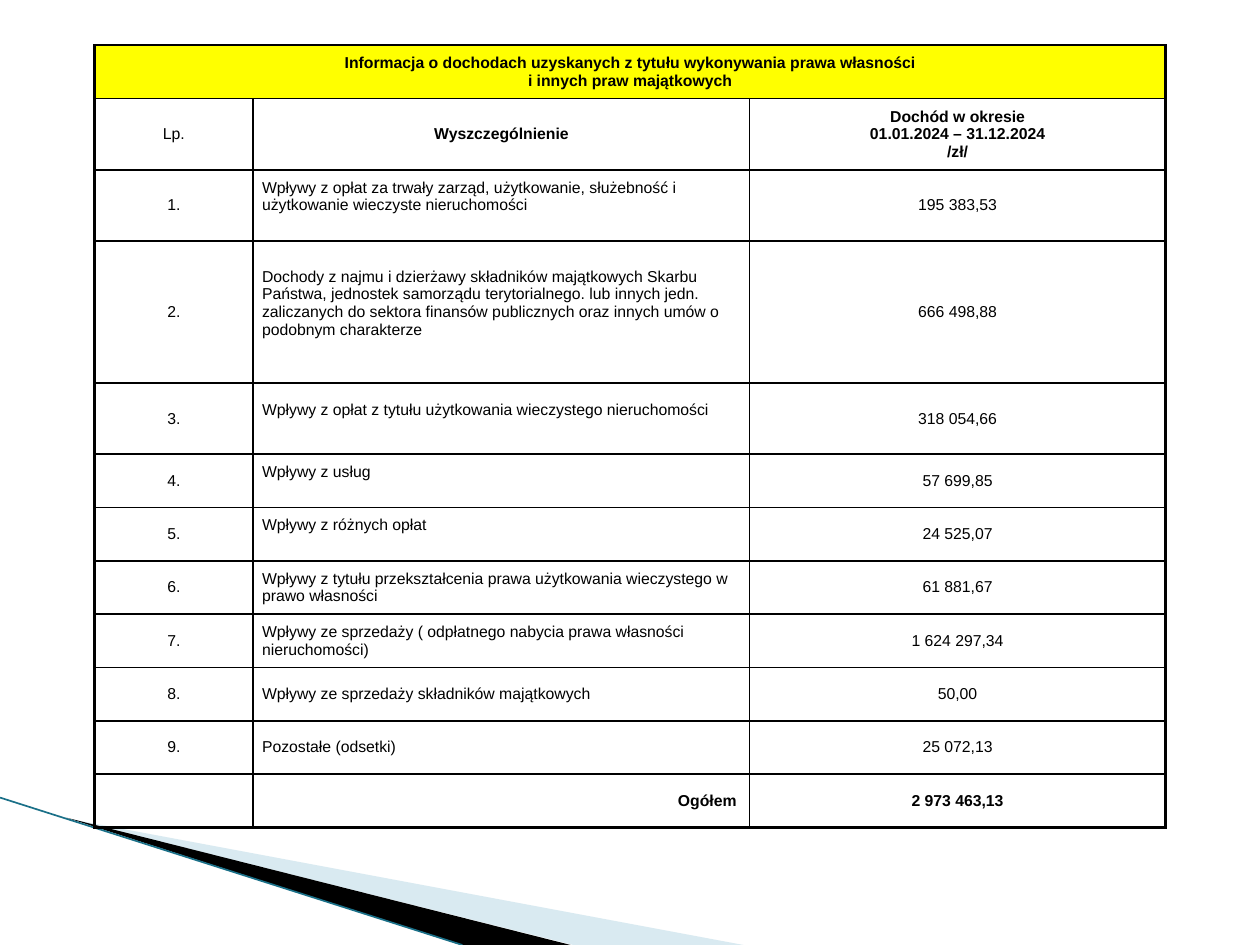
from lxml import etree
from pptx import Presentation
from pptx.dml import color
from pptx.enum import shapes, text
from pptx.oxml import ns
from pptx.util import Inches, Pt

MID, END, LEFT = text.PP_ALIGN.CENTER, text.PP_ALIGN.RIGHT, text.PP_ALIGN.LEFT
COLS = [1.26, 3.94, 3.3]
LINES = [3, 4, 4, 8, 4, 3, 3, 3, 3, 3, 3, 3]
GAPS = range(2, 7)
TITLE = ("Informacja o dochodach uzyskanych z tytułu wykonywania prawa własności"
         "\vi innych praw majątkowych")
HEAD = ("Lp.", "Wyszczególnienie", "Dochód w okresie\v01.01.2024 – 31.12.2024\n/zł/")
ITEMS = [
    ("Wpływy z opłat za trwały zarząd, użytkowanie, służebność i "
     "użytkowanie wieczyste nieruchomości", "195 383,53"),
    ("Dochody z najmu i dzierżawy składników majątkowych Skarbu Państwa, "
     "jednostek samorządu terytorialnego. lub innych jedn. zaliczanych do sektora "
     "finansów publicznych oraz innych umów o podobnym charakterze", "666 498,88"),
    ("Wpływy z opłat z tytułu użytkowania wieczystego nieruchomości", "318 054,66"),
    ("Wpływy z usług", "57 699,85"),
    ("Wpływy z różnych opłat", "24 525,07"),
    ("Wpływy z tytułu przekształcenia prawa użytkowania wieczystego w "
     "prawo własności", "61 881,67"),
    ("Wpływy ze sprzedaży ( odpłatnego nabycia prawa własności nieruchomości)",
     "1 624 297,34"),
    ("Wpływy ze sprzedaży składników majątkowych", "50,00"),
    ("Pozostałe (odsetki)", "25 072,13"),
]
TOTAL = ("", "Ogółem ", "2 973 463,13")


def rgb(code):
    """Turn a hex string into a colour."""
    return color.RGBColor.from_string(code)


def wedge(slide, left, top, pts, code, alpha=100):
    """Draw a filled outline with points relative to its corner."""
    spots = [(Inches(left + x), Inches(top + y)) for x, y in pts]
    pen = slide.shapes.build_freeform(*spots[0])
    pen.add_line_segments(spots[1:], close=True)
    shape = pen.convert_to_shape()
    shape.shadow.inherit = False
    shape.fill.solid()
    shape.fill.fore_color.rgb = rgb(code)
    shape.line.fill.background()
    if alpha < 100:
        tint = shape.fill._xPr.find(".//" + ns.qn("a:srgbClr"))
        etree.SubElement(tint, ns.qn("a:alpha"), val=str(alpha * 1000))


def corner(slide, left, top):
    """Draw the slanted decoration at the lower left."""
    wedge(slide, left + 0.55, top + 0.17,
          [(0, 0), (5.35, 1), (4, 1)], "A0CBDC", 40)
    wedge(slide, left + 0.53, top + 0.16,
          [(0, 0), (4, 1.01), (3.13, 1.01)], "000000")
    line = slide.shapes.add_connector(
        shapes.MSO_CONNECTOR.STRAIGHT, Inches(left), Inches(top),
        Inches(left + 3.67), Inches(top + 1.17))
    line.line.color.rgb = rgb("1A7088")
    line.line.width = Pt(0.95)
    etree.SubElement(line._element.spPr, ns.qn("a:effectLst"))


def frame(cell, row, col):
    """Rule a cell, heavier on the outside and below the header."""
    last = len(LINES) - 1
    heavy = {"L": col == 0, "R": col == 2 or row == 0,
             "T": row in (0, 2), "B": row in (1, last)}
    props = cell._tc.get_or_add_tcPr()
    for spot, (side, bold) in enumerate(heavy.items()):
        edge = etree.Element(ns.qn("a:ln" + side), w=str(Pt(1.5 if bold else 1)))
        fill = etree.SubElement(edge, ns.qn("a:solidFill"))
        etree.SubElement(fill, ns.qn("a:srgbClr"), val="000000")
        props.insert(spot, edge)


def fill_cell(cell, words, align, bold, gap):
    """Set the words and look of one cell."""
    cell.text = words
    cell.vertical_anchor = text.MSO_ANCHOR.MIDDLE
    cell.margin_left = cell.margin_right = Inches(0.07)
    cell.margin_top = 0
    cell.margin_bottom = Inches(gap)
    for para in cell.text_frame.paragraphs:
        para.alignment = align
        para.font.name = "Arial"
        para.font.size = Pt(9)
        para.font.bold = bold
        para.font.color.rgb = rgb("000000")


def income(slide, left, top, width, height):
    """Build the income table in the given box."""
    rows = [(TITLE, "", ""), HEAD]
    rows += [(f"{n}.", *item) for n, item in enumerate(ITEMS, 1)]
    rows.append(TOTAL)
    last = len(rows) - 1
    table = slide.shapes.add_table(
        len(rows), len(COLS), Inches(left), Inches(top),
        Inches(width), Inches(height)).table
    table.first_row = table.horz_banding = False
    for col, size in zip(table.columns, COLS):
        col.width = Inches(size * width / sum(COLS))
    for r, (words, count) in enumerate(zip(rows, LINES)):
        table.rows[r].height = Inches(height * count / sum(LINES))
        for c, word in enumerate(words):
            cell = table.cell(r, c)
            align = MID if c != 1 or r < 2 else END if r == last else LEFT
            bold = r == 0 or (r in (1, last) and c > 0)
            fill_cell(cell, word, align, bold, 0.14 if c == 1 and r in GAPS else 0)
            if r == 0:
                cell.fill.solid()
                cell.fill.fore_color.rgb = rgb("FFFF00")
            else:
                cell.fill.background()
            frame(cell, r, c)
    table.cell(0, 0).merge(table.cell(0, 2))


def main():
    """Build and save the slide."""
    deck = Presentation()
    deck.slide_width, deck.slide_height = Inches(10), Inches(7.5)
    slide = deck.slides.add_slide(deck.slide_layouts[6])
    corner(slide, 0, 6.33)
    income(slide, 0.75, 0.36, 8.5, 6.21)
    deck.save("out.pptx")


if __name__ == "__main__":
    main()
